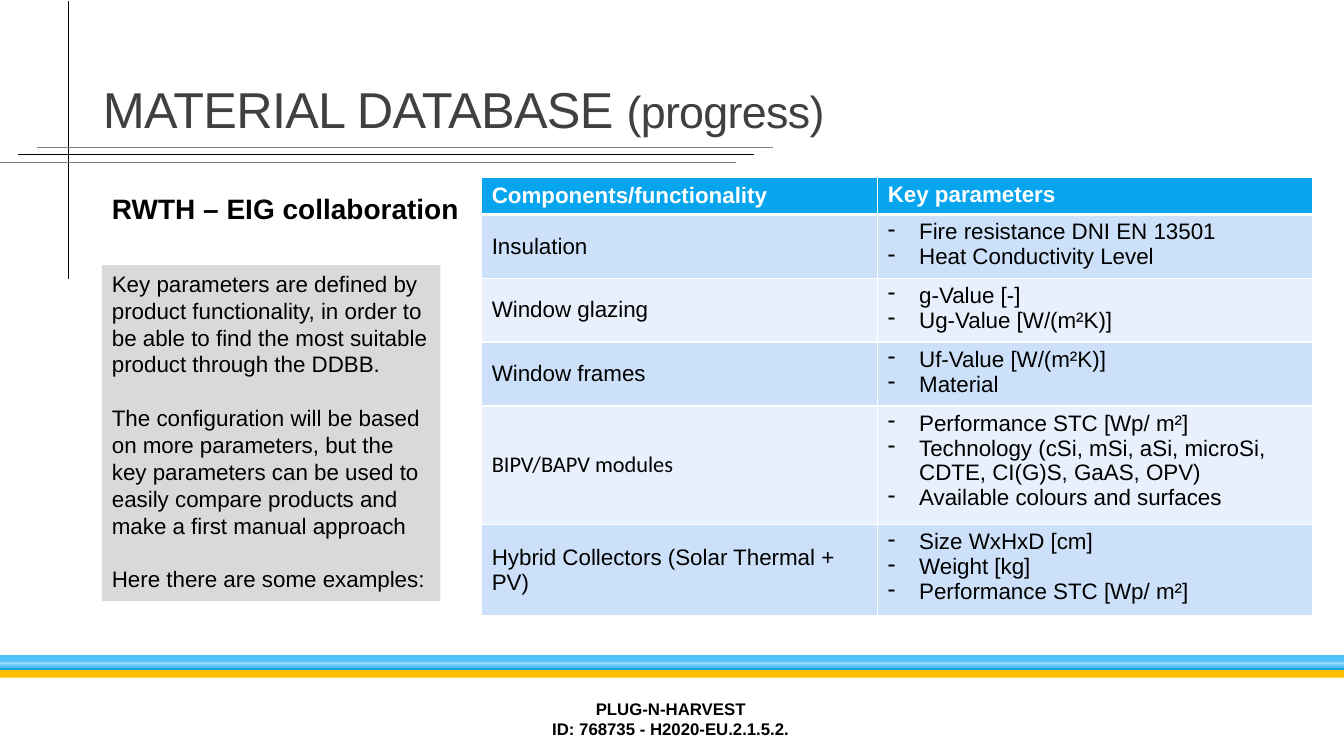
from dataclasses import dataclass

from lxml.etree import SubElement, fromstring
from pptx import Presentation
from pptx.dml.color import RGBColor
from pptx.enum.shapes import MSO_CONNECTOR, MSO_SHAPE
from pptx.enum.text import MSO_ANCHOR, MSO_AUTO_SIZE, PP_ALIGN
from pptx.oxml.ns import nsdecls, qn
from pptx.util import Cm, Pt


@dataclass
class Bar:
    top: float
    fill: str


@dataclass
class Rule:
    x1: float
    y1: float
    x2: float
    y2: float
    color: str
    width: float


@dataclass
class Part:
    name: str
    keys: list[str]
    height: float
    font: str = "Arial"


WIDE, HIGH = 33.87, 19.05
THICK = 0.19
LONG = 18.54
BARS = [Bar(16.89, "FFC000"), Bar(16.7, ""), Bar(16.51, "51C3F9")]
RULES = [
    Rule(0.46, 3.89, 0.46 + LONG, 3.89, "000000", 1),
    Rule(1.73, 0.03, 1.73, 7.04, "000000", 1),
    Rule(0.94, 3.71, 0.94 + LONG, 3.71, "808080", 0.5),
    Rule(0, 4.09, LONG, 4.09, "808080", 0.5),
]
FADE = [(0, "0793D6"), (48, "56C5F9"), (100, "97DBFB")]
COLS = [9.98, 10.97]
HEADS = ["Components/functionality", "Key parameters"]
HEAD = 0.93
PARTS = [
    Part("Insulation", ["Fire resistance DNI EN 13501", "Heat Conductivity Level"], 1.6),
    Part("Window glazing", ["g-Value [-]", "Ug-Value [W/(m²K)]"], 1.6),
    Part("Window frames", ["Uf-Value [W/(m²K)]", "Material"], 1.6),
    Part("BIPV/BAPV modules", [
        "Performance STC [Wp/ m²]",
        "Technology (cSi, mSi, aSi, microSi, CDTE, CI(G)S, GaAS, OPV)",
        "Available colours and surfaces",
    ], 2.99, "Calibri"),
    Part("Hybrid Collectors (Solar Thermal + PV)",
         ["Size WxHxD [cm]", "Weight [kg]", "Performance STC [Wp/ m²]"], 2.29),
]
NOTES = [
    "Key parameters are defined by product functionality, in order to be able to find "
    "the most suitable product through the DDBB.",
    "The configuration will be based on more parameters, but the key parameters can be "
    "used to easily compare products and make a first manual approach",
    "Here there are some examples:",
]


def rgb(code: str) -> RGBColor:
    return RGBColor.from_string(code)


def write(frame, lines: list[str], *, size=16, font="Arial", color="000000", bold=False,
          align=PP_ALIGN.LEFT, anchor=MSO_ANCHOR.TOP, gap=0, mark="", lead=None) -> None:
    frame.word_wrap = True
    frame.vertical_anchor = anchor
    for i, line in enumerate(lines):
        para = frame.add_paragraph() if i else frame.paragraphs[0]
        para.text = line
        para.alignment = align
        if lead:
            para.line_spacing = lead
        if i and gap:
            para.space_before = Pt(gap)
        if mark:
            props = para._p.get_or_add_pPr()
            props.set("marL", str(Cm(0.79)))
            props.set("indent", str(Cm(-0.79)))
            SubElement(props, qn("a:buChar"), char=mark)
        for run in para.runs:
            style(run, size, font, color, bold)


def style(run, size: float, font: str, color: str, bold: bool = False) -> None:
    run.font.size = Pt(size)
    run.font.name = font
    run.font.bold = bold
    run.font.color.rgb = rgb(color)


def block(slide, x: float, y: float, w: float, h: float, fill: str):
    shape = slide.shapes.add_shape(MSO_SHAPE.RECTANGLE, Cm(x), Cm(y), Cm(w), Cm(h))
    shape.shadow.inherit = False
    shape.line.fill.background()
    if fill:
        shape.fill.solid()
        shape.fill.fore_color.rgb = rgb(fill)
    else:
        stops = "".join(f'<a:gs pos="{at * 1000}"><a:srgbClr val="{code}"/></a:gs>'
                        for at, code in FADE)
        grad = fromstring(f'<a:gradFill {nsdecls("a")}><a:gsLst>{stops}</a:gsLst>'
                          '<a:lin ang="16200000" scaled="0"/></a:gradFill>')
        shape._element.spPr.find(qn("a:prstGeom")).addnext(grad)
    return shape


def stroke(slide, rule: Rule) -> None:
    line = slide.shapes.add_connector(MSO_CONNECTOR.STRAIGHT, Cm(rule.x1), Cm(rule.y1),
                                      Cm(rule.x2), Cm(rule.y2))
    line.line.color.rgb = rgb(rule.color)
    line.line.width = Pt(rule.width)
    SubElement(line._element.spPr, qn("a:effectLst"))


def label(slide, x: float, y: float, w: float, h: float):
    return slide.shapes.add_textbox(Cm(x), Cm(y), Cm(w), Cm(h)).text_frame


def paint(cell, fill: str, base: float = 1) -> None:
    cell.fill.solid()
    cell.fill.fore_color.rgb = rgb(fill)
    props = cell._tc.get_or_add_tcPr()
    for i, (side, width) in enumerate([("L", 1), ("R", 1), ("T", 1), ("B", base)]):
        props.insert(i, fromstring(
            f'<a:ln{side} {nsdecls("a")} w="{Pt(width)}"><a:solidFill>'
            f'<a:srgbClr val="FFFFFF"/></a:solidFill></a:ln{side}>'))


def grid(slide) -> None:
    highs = [HEAD] + [part.height for part in PARTS]
    table = slide.shapes.add_table(len(highs), len(COLS), Cm(12.14), Cm(4.47),
                                   Cm(sum(COLS)), Cm(sum(highs))).table
    for col, width in zip(table.columns, COLS):
        col.width = Cm(width)
    for row, high in zip(table.rows, highs):
        row.height = Cm(high)
    sides = [MSO_ANCHOR.MIDDLE, MSO_ANCHOR.TOP]
    for i, (text, side) in enumerate(zip(HEADS, sides)):
        cell = table.cell(0, i)
        paint(cell, "08A5EF", 3)
        write(cell.text_frame, [text], color="FFFFFF", bold=True)
        cell.vertical_anchor = side
    for i, part in enumerate(PARTS, 1):
        left, right = table.cell(i, 0), table.cell(i, 1)
        for cell, side in zip((left, right), sides):
            paint(cell, "CCE1F9" if i % 2 else "E7F0FC")
            cell.vertical_anchor = side
        write(left.text_frame, [part.name], font=part.font, anchor=MSO_ANCHOR.MIDDLE)
        write(right.text_frame, part.keys, mark="-")


def head(slide) -> None:
    title = slide.shapes.title
    title.left, title.top, title.width, title.height = Cm(2.34), Cm(1.02), Cm(29.21), Cm(3.68)
    frame = title.text_frame
    frame.auto_size = MSO_AUTO_SIZE.NONE
    write(frame, ["MATERIAL DATABASE "], size=36, color="404040",
          anchor=MSO_ANCHOR.MIDDLE, lead=0.85)
    para = frame.paragraphs[0]
    run = para.add_run()
    run.text = "(progress)"
    style(run, 32, "Arial", "404040")
    for run in para.runs:
        run.font._element.set("spc", "-50")


def main() -> None:
    deck = Presentation()
    deck.slide_width, deck.slide_height = Cm(WIDE), Cm(HIGH)
    slide = deck.slides.add_slide(deck.slide_layouts[5])
    for bar in BARS:
        block(slide, 0, bar.top, WIDE, THICK, bar.fill)
    for rule in RULES:
        stroke(slide, rule)
    head(slide)
    write(label(slide, 10.21, 17.6, 13.39, 1.02),
          ["PLUG-N-HARVEST\vID: 768735 - H2020-EU.2.1.5.2."], size=12, bold=True,
          align=PP_ALIGN.CENTER, anchor=MSO_ANCHOR.MIDDLE)
    write(label(slide, 2.57, 4.7, 19.56, 1.12), ["RWTH – EIG collaboration"],
          size=20, bold=True)
    write(block(slide, 2.57, 6.68, 8.53, 8.46, "D9D9D9").text_frame, NOTES, gap=19.2)
    grid(slide)
    deck.save("out.pptx")


if __name__ == "__main__":
    main()
